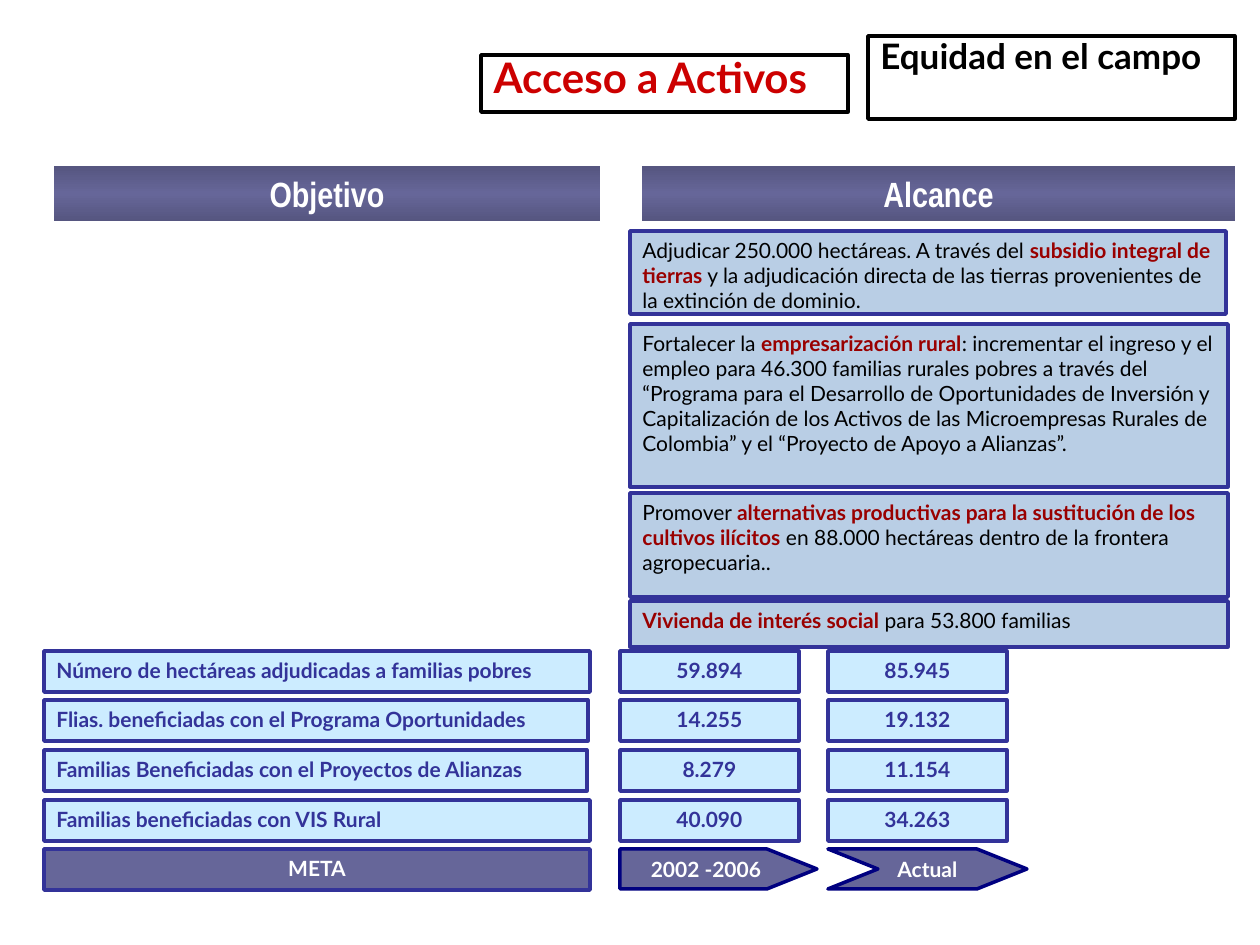
from copy import deepcopy
from pptx import Presentation
from pptx import util as u
from pptx.dml.color import RGBColor
from pptx.enum import shapes, text
from pptx.oxml.ns import qn

PX = 914400 / 126
COLORS = dict(white="FFFFFF", black="000000", red="CC0000", dark_red="990000",
              navy="000080", blue="333399", slate="666699", slate_dark="565680",
              pale="B9CEE5", ice="CCECFF")
LEFT, CENTER = text.PP_ALIGN.LEFT, text.PP_ALIGN.CENTER
RECT = shapes.MSO_SHAPE.RECTANGLE

# Scope boxes: top, width, height, runs (text, highlighted)
SCOPE = [
    (231, 596, 83, [
        ("Adjudicar 250.000 hectáreas. A través del ", False),
        ("subsidio integral de tierras", True),
        (" y la adjudicación directa de las tierras provenientes de la "
         "extinción de dominio.", False)]),
    (324, 598, 163, [
        ("Fortalecer la ", False),
        ("empresarización rural", True),
        (": incrementar el ingreso y el empleo para 46.300 familias rurales "
         "pobres a través del “Programa para el Desarrollo de Oportunidades "
         "de Inversión y Capitalización de los Activos de las Microempresas "
         "Rurales de Colombia” y el “Proyecto de Apoyo a Alianzas”.", False)]),
    (493, 598, 104, [
        ("Promover ", False),
        ("alternativas productivas para la sustitución de los cultivos "
         "ilícitos", True),
        (" en 88.000 hectáreas dentro de la frontera agropecuaria..", False)]),
    (601, 598, 46, [
        ("Vivienda de interés social", True),
        (" para 53.800 familias", False)]),
]

# Goal rows: label, label width, 2002-2006 value, current value
GOALS = [
    ("Número de hectáreas adjudicadas a familias pobres", 546, "59.894", "85.945"),
    ("Flias. beneficiadas con el Programa Oportunidades", 544, "14.255", "19.132"),
    ("Familias Beneficiadas con el Proyectos de Alianzas", 543, "8.279", "11.154"),
    ("Familias beneficiadas con VIS Rural", 546, "40.090", "34.263"),
]
ROW_TOP, ROW_PITCH, ROW_H = 651, 49.5, 41
LABEL_X, PERIOD_X, CURRENT_X = 44, 620, 828


def rgb(name):
    return RGBColor.from_string(COLORS[name])


def px(n):
    return u.Emu(round(n * PX))


def place(sp, box):
    for name, n in zip(("left", "top", "width", "height"), box):
        setattr(sp, name, px(n))


def paint(sp, fill, line):
    if fill:
        sp.fill.solid()
        sp.fill.fore_color.rgb = rgb(fill)
    if line:
        sp.line.color.rgb = rgb(line)
        sp.line.width = u.Pt(2)
    else:
        sp.line.fill.background()


def write(sp, runs, align=LEFT, anchor=text.MSO_ANCHOR.TOP, spacing=None):
    """Fill the shape with one paragraph of (text, format) runs."""
    tf = sp.text_frame
    frame = dict(word_wrap=True, auto_size=text.MSO_AUTO_SIZE.NONE,
                 vertical_anchor=anchor)
    for name, value in frame.items():
        setattr(tf, name, value)
    p = tf.paragraphs[0]
    p.alignment, p.line_spacing, p.space_before = align, spacing, u.Pt(0)
    for words, fmt in runs:
        r = p.add_run()
        r.text = words
        for name, value in fmt.items():
            setattr(r.font, name, value)
        r.font.color.rgb = rgb(fmt["tint"])


def style(tint, size=12, bold=True, name="Lato"):
    return dict(name=name, size=u.Pt(size), bold=bold, tint=tint)


def add_box(s, box, fill, line, runs, kind=RECT, **layout):
    sp = s.shapes.add_shape(kind, *map(px, box))
    sp.shadow.inherit = False
    paint(sp, fill, line)
    write(sp, runs, **layout)
    return sp


def add_heading(s, x, w, words):
    """Column heading with a dark-light-dark vertical gradient."""
    sp = add_box(s, (x, 166, w, 55), None, None,
                 [(words, style("white", 20, name="Arial Narrow"))], align=CENTER)
    sp.fill.gradient()
    sp.fill.gradient_angle = 90
    first = next(sp.element.iter(qn("a:gs")))
    first.addnext(deepcopy(first))
    tints = ("slate_dark", "slate", "slate_dark")
    for stop, pos, tint in zip(sp.fill.gradient_stops, (0, 0.5, 1), tints):
        stop.position = pos
        stop.color.rgb = rgb(tint)


def add_arrow(s, kind, x, w, words):
    sp = add_box(s, (x, 849, w, 40), "slate", "navy", [(words, style("white"))],
                 kind=kind, align=CENTER, anchor=text.MSO_ANCHOR.MIDDLE)
    sp.adjustments[0] = 1.25


def add_titles(s):
    title = s.shapes.title
    place(title, (481, 55, 367, 57))
    paint(title, "white", "black")
    write(title, [("Acceso a Activos", style("red", 24))], spacing=0.8)
    add_box(s, (868, 36, 367, 83), "white", "black",
            [("Equidad en el campo", style("black", 20))], spacing=0.8)


def add_goals(s):
    for i, (label, label_w, period, current) in enumerate(GOALS):
        y = round(ROW_TOP + i * ROW_PITCH)
        cells = [(LABEL_X, label_w, label, LEFT),
                 (PERIOD_X, 179, period, CENTER),
                 (CURRENT_X, 179, current, CENTER)]
        for x, w, words, align in cells:
            add_box(s, (x, y, w, ROW_H), "ice", "blue",
                    [(words, style("blue"))], align=align)

    # Legend row under the values
    y = round(ROW_TOP + len(GOALS) * ROW_PITCH)
    add_box(s, (LABEL_X, y, 546, ROW_H), "slate", "blue",
            [("META", style("white"))], align=CENTER)
    add_arrow(s, shapes.MSO_SHAPE.PENTAGON, PERIOD_X, 197, "2002 -2006")
    add_arrow(s, shapes.MSO_SHAPE.CHEVRON, CURRENT_X, 199, "Actual")


def main():
    prs = Presentation()
    prs.slide_width, prs.slide_height = px(1260), px(945)
    s = prs.slides.add_slide(prs.slide_layouts[5])
    add_titles(s)
    add_heading(s, 54, 546, "Objetivo")
    add_heading(s, 642, 593, "Alcance")
    for y, w, h, parts in SCOPE:
        runs = [(words, style("dark_red" if strong else "black", bold=strong))
                for words, strong in parts]
        add_box(s, (630, y, w, h), "pale", "blue", runs)
    add_goals(s)
    prs.save("out.pptx")


if __name__ == "__main__":
    main()
